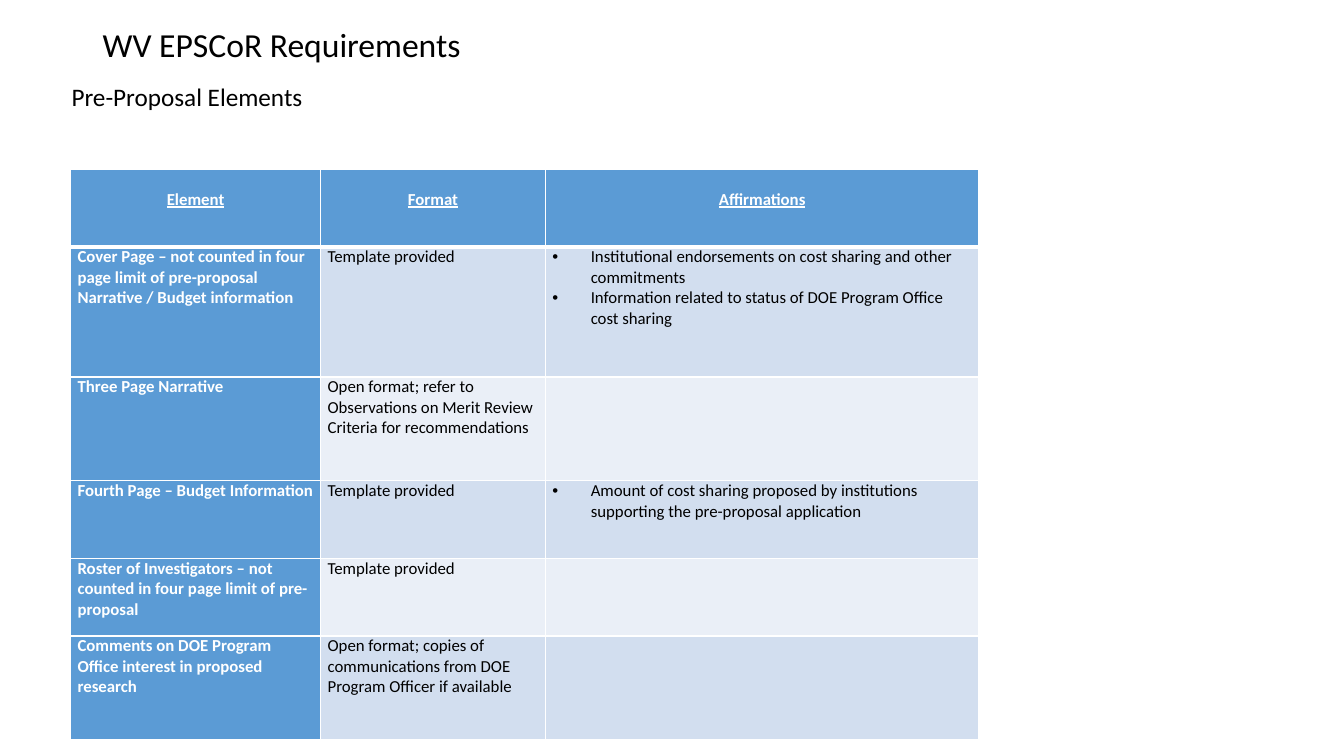
from lxml.etree import SubElement
from pptx import Presentation
from pptx.dml.color import RGBColor
from pptx.enum.text import MSO_ANCHOR, PP_ALIGN
from pptx.oxml.ns import qn
from pptx.util import Inches, Pt

COLORS = {
    "text": "000000",
    "white": "FFFFFF",
    "accent": "5B9BD5",
    "band_dark": "D2DEEF",
    "band_light": "EAEFF7",
}
BODY = {"size": Pt(12), "bold": False, "underline": False}
LABEL = {"size": Pt(12), "bold": True, "underline": False}
HEADER = {"size": Pt(12), "bold": True, "underline": True}

COL_WIDTHS = [2.48, 2.23, 4.3]
ROW_HEIGHTS = [0.77, 1.29, 1.03, 0.77, 0.77, 1.03]
HEADINGS = ["Element", "Format", "Affirmations"]
ELEMENTS = [
    ("Cover Page – not counted in four page limit of pre-proposal Narrative / Budget information",
     "Template provided",
     ["Institutional endorsements on cost sharing and other commitments",
      "Information related to status of DOE Program Office cost sharing"]),
    ("Three Page Narrative",
     "Open format; refer to Observations on Merit Review Criteria for recommendations",
     []),
    ("Fourth Page – Budget Information",
     "Template provided",
     ["Amount of cost sharing proposed by institutions supporting the pre-proposal application"]),
    ("Roster of Investigators – not counted in four page limit of pre-proposal",
     "Template provided",
     []),
    ("Comments on DOE Program Office interest in proposed research",
     "Open format; copies of communications from DOE Program Officer if available",
     []),
]


def rgb(name):
    return RGBColor.from_string(COLORS[name])


def add_run(p, text, color, formats):
    r = p.add_run()
    r.text = text
    r.font.name = "Calibri"
    r.font.color.rgb = rgb(color)
    for name, value in formats.items():
        setattr(r.font, name, value)


def add_text(s, box, text, size, frame_formats, line_spacing=1.0):
    tf = s.shapes.add_textbox(*map(Inches, box)).text_frame
    tf.word_wrap = True
    for name, value in frame_formats.items():
        setattr(tf, name, value)
    p = tf.paragraphs[0]
    p.line_spacing = line_spacing
    add_run(p, text, "text", {"size": Pt(size)})


def add_bullet(p):
    pPr = p._p.get_or_add_pPr()
    pPr.set("marL", str(Inches(0.38)))
    pPr.set("indent", str(Inches(-0.38)))
    SubElement(pPr, qn("a:buFont"), typeface="Arial")
    SubElement(pPr, qn("a:buChar"), char="•")


def set_borders(cell, widths):
    tcPr = cell._tc.get_or_add_tcPr()
    for side in ("L", "R", "T", "B"):
        ln = SubElement(tcPr, qn(f"a:ln{side}"), w=str(Pt(widths.get(side, 1))))
        fill = SubElement(ln, qn("a:solidFill"))
        SubElement(fill, qn("a:srgbClr"), val=COLORS["white"])


def fill_cell(cell, lines, fill, color, formats, borders, top=0, align=PP_ALIGN.LEFT, bullets=False):
    set_borders(cell, borders)
    cell.fill.solid()
    cell.fill.fore_color.rgb = rgb(fill)
    margins = {"margin_left": 0.07, "margin_right": 0.07, "margin_top": top, "margin_bottom": 0}
    for name, value in margins.items():
        setattr(cell, name, Inches(value))
    tf = cell.text_frame
    for i, line in enumerate(lines):
        p = tf.add_paragraph() if i else tf.paragraphs[0]
        p.alignment = align
        if bullets:
            add_bullet(p)
        add_run(p, line, color, formats)


def add_elements_table(s):
    table = s.shapes.add_table(
        len(ROW_HEIGHTS), len(COL_WIDTHS), Inches(0.7), Inches(1.68),
        Inches(sum(COL_WIDTHS)), Inches(sum(ROW_HEIGHTS))).table
    for column, width in zip(table.columns, COL_WIDTHS):
        column.width = Inches(width)
    for row, height in zip(table.rows, ROW_HEIGHTS):
        row.height = Inches(height)
    for col, heading in enumerate(HEADINGS):
        fill_cell(table.cell(0, col), [heading], "accent", "white", HEADER, {"B": 3},
                  top=0.2, align=PP_ALIGN.CENTER)
    for row, (element, layout, affirmations) in enumerate(ELEMENTS, 1):
        band = "band_dark" if row % 2 else "band_light"
        borders = {"T": 3} if row == 1 else {}
        fill_cell(table.cell(row, 0), [element], "accent", "white", LABEL, borders)
        fill_cell(table.cell(row, 1), [layout], band, "text", BODY, borders)
        fill_cell(table.cell(row, 2), affirmations, band, "text", BODY, borders, bullets=True)


def main():
    prs = Presentation()
    prs.slide_width = Inches(13.33)
    prs.slide_height = Inches(7.5)
    s = prs.slides.add_slide(prs.slide_layouts[6])
    add_text(s, (0.92, 0, 11.5, 0.92), "WV EPSCoR Requirements", 24,
             {"vertical_anchor": MSO_ANCHOR.MIDDLE}, line_spacing=0.9)
    add_text(s, (0.56, 0.76, 12.4, 1.01), "Pre-Proposal Elements", 18,
             {"margin_left": Inches(0.15)})
    add_elements_table(s)
    prs.save("out.pptx")


if __name__ == "__main__":
    main()
